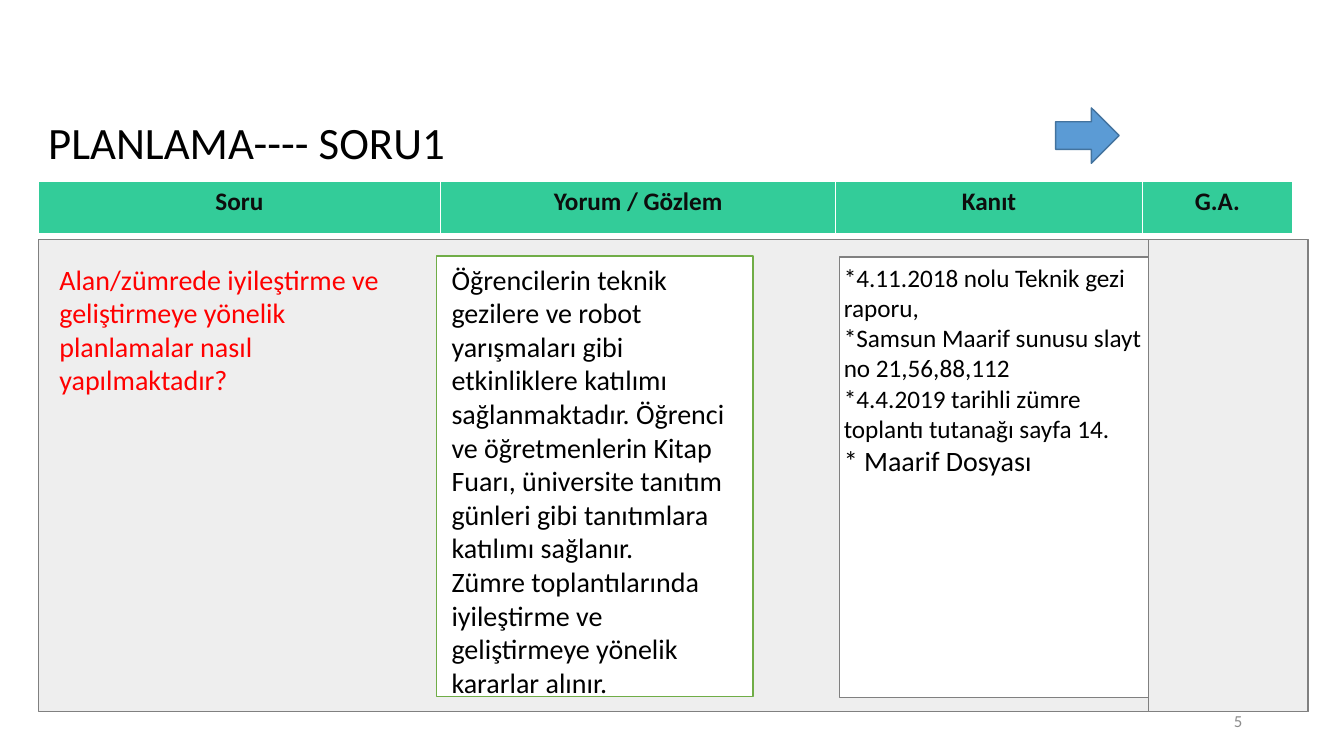
from lxml.etree import SubElement
from pptx import Presentation
from pptx.dml.color import RGBColor
from pptx.enum.shapes import MSO_SHAPE
from pptx.enum.text import MSO_ANCHOR, PP_ALIGN
from pptx.oxml.ns import qn
from pptx.util import Inches, Pt

FONT = "Calibri"
PANEL = "EEEEEE"
GRAY = "808080"
GREEN = "70AD47"
HEADER = "33CC99"
WHITE = "FFFFFF"
BLACK = "000000"
BORDERS = {"a:lnL": 1, "a:lnR": 1, "a:lnT": 1, "a:lnB": 3}

COLUMNS = [("Soru", 3.99), ("Yorum / Gözlem", 3.92), ("Kanıt", 3.04), ("G.A.", 1.49)]
QUESTION = "Alan/zümrede iyileştirme ve geliştirmeye yönelik planlamalar nasıl yapılmaktadır?"
OBSERVATIONS = [
    "Öğrencilerin teknik gezilere ve robot yarışmaları gibi etkinliklere katılımı "
    "sağlanmaktadır. Öğrenci ve öğretmenlerin Kitap Fuarı, üniversite tanıtım günleri "
    "gibi tanıtımlara katılımı sağlanır.",
    "Zümre toplantılarında iyileştirme ve geliştirmeye yönelik kararlar alınır.",
]
EVIDENCE = [
    "*4.11.2018 nolu Teknik gezi raporu,",
    "*Samsun Maarif sunusu slayt no 21,56,88,112",
    "*4.4.2019 tarihli zümre toplantı tutanağı sayfa 14.",
    "* Maarif Dosyası",
]


def color(value):
    return RGBColor.from_string(value)


def style(paragraph, size, font_color, align=PP_ALIGN.LEFT, bold=False):
    paragraph.alignment = align
    font = paragraph.font
    font.name, font.size, font.bold = FONT, Pt(size), bold
    font.color.rgb = color(font_color)


def add_box(slide, place, fill, line=None, width=1, kind=MSO_SHAPE.RECTANGLE):
    shape = slide.shapes.add_shape(kind, *map(Inches, place))
    shape.shadow.inherit = False
    shape.fill.solid()
    shape.fill.fore_color.rgb = color(fill)
    if line:
        shape.line.color.rgb = color(line)
        shape.line.width = Pt(width)
    else:
        shape.line.fill.background()
    return shape


def write(shape, lines, sizes, font_color, align=PP_ALIGN.LEFT, anchor=MSO_ANCHOR.TOP):
    frame = shape.text_frame
    frame.word_wrap = True
    frame.vertical_anchor = anchor
    frame.text = "\n".join(lines)
    for paragraph, size in zip(frame.paragraphs, sizes):
        style(paragraph, size, font_color, align)


def add_text(slide, place, lines, sizes, font_color=BLACK, **options):
    box = slide.shapes.add_textbox(*map(Inches, place))
    write(box, lines, sizes, font_color, **options)
    return box


def set_borders(cell):
    properties = cell._tc.get_or_add_tcPr()
    for tag, width in BORDERS.items():
        line = SubElement(properties, qn(tag), w=str(Pt(width)))
        fill = SubElement(line, qn("a:solidFill"))
        SubElement(fill, qn("a:srgbClr"), val=WHITE)


def add_header_table(slide, place):
    table = slide.shapes.add_table(1, len(COLUMNS), *map(Inches, place)).table
    for index, (label, width) in enumerate(COLUMNS):
        table.columns[index].width = Inches(width)
        cell = table.cell(0, index)
        cell.text = label
        style(cell.text_frame.paragraphs[0], 18, "0D0D0D", PP_ALIGN.CENTER, bold=True)
        set_borders(cell)
        cell.fill.solid()
        cell.fill.fore_color.rgb = color(HEADER)


def main():
    presentation = Presentation()
    presentation.slide_width = Inches(13.33)
    presentation.slide_height = Inches(7.5)
    slide = presentation.slides.add_slide(presentation.slide_layouts[6])

    # Background panel and observation frame
    add_box(slide, (0.38, 2.38, 12.6, 4.68), PANEL, GRAY, 0.75)
    add_box(slide, (4.33, 2.54, 3.14, 4.37), WHITE, GREEN)

    # Title, page number and column headings
    title = add_text(slide, (0.38, 1.15, 9.93, 0.57), ["PLANLAMA---- SORU1"], [32],
                     anchor=MSO_ANCHOR.MIDDLE)
    title.text_frame.paragraphs[0].line_spacing = 0.9
    add_text(slide, (9.42, 6.95, 3, 0.4), ["5"], [12], "8C8C8C",
             align=PP_ALIGN.RIGHT, anchor=MSO_ANCHOR.MIDDLE)
    add_header_table(slide, (0.38, 1.8, 12.44, 0.53))

    # Question and observations
    question = add_box(slide, (0.49, 2.55, 3.64, 1.45), PANEL)
    write(question, [QUESTION], [20], "FF0000")
    add_text(slide, (4.38, 2.55, 3.08, 4.48), OBSERVATIONS, [20, 20])

    # Evidence
    add_box(slide, (8.33, 2.55, 3.07, 4.37), WHITE, GRAY, 0.75)
    add_text(slide, (8.27, 2.55, 3.18, 2.59), EVIDENCE, [18, 18, 18, 20])

    # G.A. column and arrow
    add_box(slide, (11.39, 2.38, 1.58, 4.68), PANEL, GRAY, 0.75)
    add_box(slide, (10.47, 1.07, 0.63, 0.55), "5B9BD5", "43739E",
            kind=MSO_SHAPE.RIGHT_ARROW)

    presentation.save("out.pptx")


if __name__ == "__main__":
    main()
